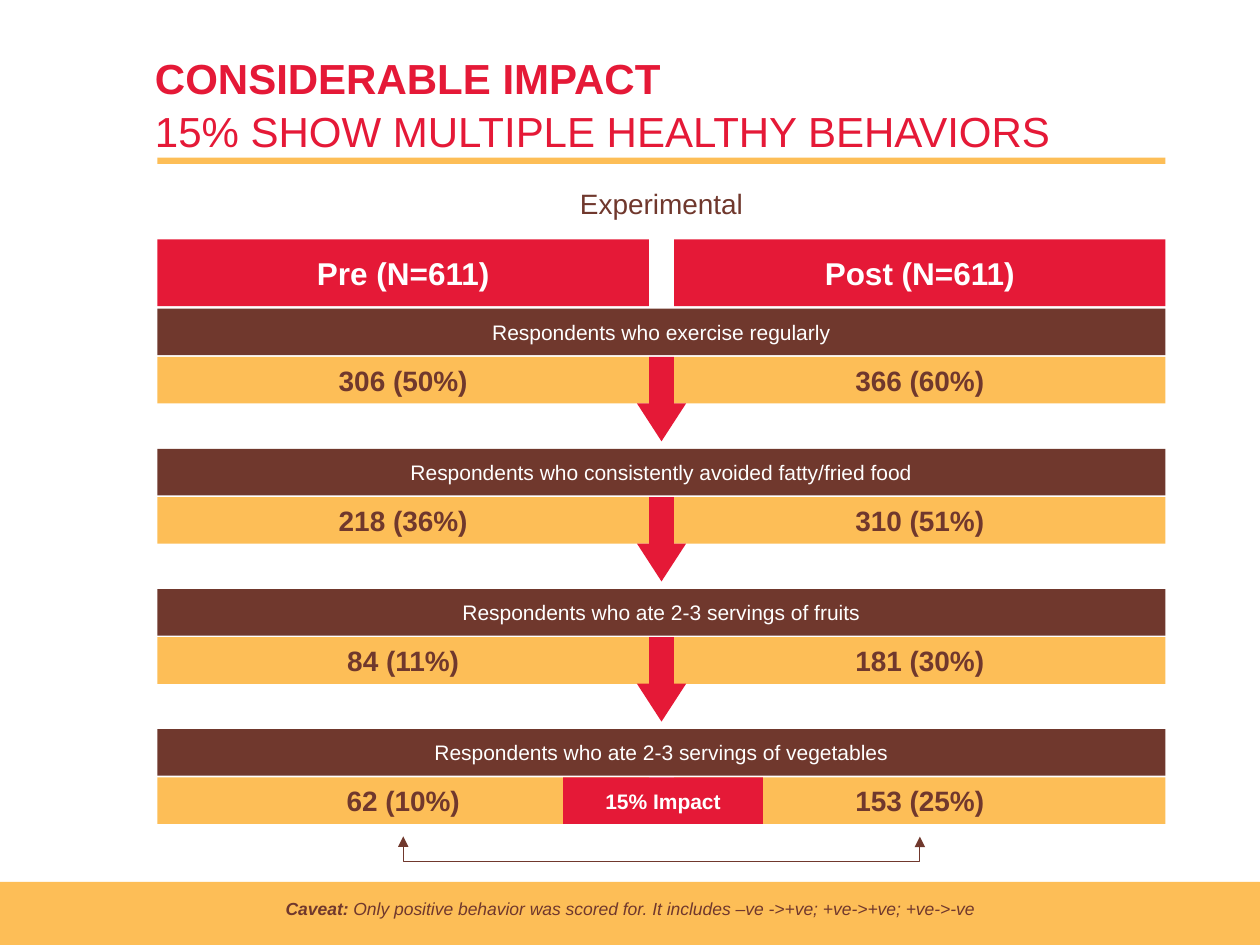
"""Build a slide comparing healthy behaviors before and after a programme."""
from dataclasses import dataclass

from lxml.etree import SubElement
from pptx import Presentation
from pptx.dml.color import RGBColor
from pptx.enum.shapes import MSO_CONNECTOR, MSO_SHAPE
from pptx.enum.text import MSO_ANCHOR, PP_ALIGN
from pptx.oxml.ns import qn
from pptx.util import Emu, Inches, Pt


@dataclass(frozen=True)
class Theme:
    font: str = "Arial"
    red: str = "E51937"
    brown: str = "70382D"
    gold: str = "FDBE57"
    white: str = "FFFFFF"
    title: int = 24
    header: int = 18
    count: int = 16
    label: int = 12
    caveat: int = 10


@dataclass(frozen=True)
class Grid:
    columns: int = 40
    rows: int = 30
    left: float = 5
    width: float = 32
    half: float = 15.6
    bar: float = 1.48
    first_stage: float = 9.8
    stage_step: float = 4.45
    count_offset: float = 1.53

    @property
    def middle(self) -> float:
        return self.left + self.width / 2

    @property
    def halves(self) -> tuple[float, float]:
        return self.left, self.left + self.width - self.half


@dataclass(frozen=True)
class Box:
    x: float
    y: float
    w: float
    h: float


@dataclass(frozen=True)
class Run:
    text: str
    size: int
    color: str
    bold: bool = False
    italic: bool = False


@dataclass(frozen=True)
class Stage:
    label: str
    counts: tuple[str, str]


THEME = Theme()
GRID = Grid()
HEADERS = ("Pre (N=611)", "Post (N=611)")
STAGES = (
    Stage("Respondents who exercise regularly", ("306 (50%)", "366 (60%)")),
    Stage("Respondents who consistently avoided fatty/fried food", ("218 (36%)", "310 (51%)")),
    Stage("Respondents who ate 2-3 servings of fruits", ("84 (11%)", "181 (30%)")),
    Stage("Respondents who ate 2-3 servings of vegetables", ("62 (10%)", "153 (25%)")),
)

prs = Presentation()
prs.slide_width, prs.slide_height = Inches(10), Inches(7.5)


def col(n: float) -> Emu:
    """Convert grid columns to a length."""
    return Emu(round(prs.slide_width * n / GRID.columns))


def row(n: float) -> Emu:
    """Convert grid rows to a length."""
    return Emu(round(prs.slide_height * n / GRID.rows))


def place(box: Box) -> tuple[Emu, Emu, Emu, Emu]:
    """Convert a grid box to left, top, width and height."""
    return col(box.x), row(box.y), col(box.w), row(box.h)


def add_run(p, run: Run) -> None:
    """Append one formatted run to a paragraph."""
    r = p.add_run()
    r.text = run.text
    f = r.font
    f.name, f.size, f.bold, f.italic = THEME.font, Pt(run.size), run.bold, run.italic
    f.color.rgb = RGBColor.from_string(run.color)


def add_block(s, box: Box, fill: str, run: Run | None = None, kind=MSO_SHAPE.RECTANGLE):
    """Draw a flat filled shape with optional centred text."""
    sp = s.shapes.add_shape(kind, *place(box))
    sp.shadow.inherit = False
    sp.fill.solid()
    sp.fill.fore_color.rgb = RGBColor.from_string(fill)
    sp.line.fill.background()
    if run:
        tf = sp.text_frame
        tf.vertical_anchor = MSO_ANCHOR.MIDDLE
        p = tf.paragraphs[0]
        p.alignment = PP_ALIGN.CENTER
        add_run(p, run)
    return sp


def add_caption(s, box: Box, *runs: Run) -> None:
    """Add a centred text box."""
    tf = s.shapes.add_textbox(*place(box)).text_frame
    tf.word_wrap = True
    p = tf.paragraphs[0]
    p.alignment = PP_ALIGN.CENTER
    for run in runs:
        add_run(p, run)


def set_title(s, box: Box, *runs: Run) -> None:
    """Place the title and fill it with one paragraph per run."""
    sp = s.shapes.title
    sp.left, sp.top, sp.width, sp.height = place(box)
    tf = sp.text_frame
    tf.vertical_anchor = MSO_ANCHOR.TOP
    tf.margin_top, tf.margin_bottom = Inches(0.09), 0
    for i, run in enumerate(runs):
        p = tf.add_paragraph() if i else tf.paragraphs[0]
        p.alignment = PP_ALIGN.LEFT
        p.space_before = Pt(i)
        add_run(p, run)


def add_stage(s, stage: Stage, y: float) -> None:
    """Draw a label bar with its two counts beneath."""
    add_block(s, Box(GRID.left, y, GRID.width, GRID.bar), THEME.brown,
              Run(stage.label, THEME.label, THEME.white))
    for x, count in zip(GRID.halves, stage.counts):
        add_block(s, Box(x, y + GRID.count_offset, GRID.half, GRID.bar), THEME.gold,
                  Run(count, THEME.count, THEME.brown, bold=True))


def add_bracket(s, y: float, span: float, drop: float) -> None:
    """Draw a double-headed elbow connector that dips below both columns."""
    width = Emu(1588)
    x = col(GRID.middle)
    c = s.shapes.add_connector(MSO_CONNECTOR.ELBOW, x + width, row(y) - col(span / 2),
                               x, row(y) + col(span / 2))
    c.line.color.rgb = RGBColor.from_string(THEME.brown)
    c.line.width = Pt(0.5)
    pr = c._element.spPr
    pr.find(qn("a:xfrm")).set("rot", str(270 * 60000))
    guides = pr.find(qn("a:prstGeom")).get_or_add_avLst()
    SubElement(guides, qn("a:gd"), name="adj1", fmla=f"val {round(row(drop) / width * 100000)}")
    for end in ("a:headEnd", "a:tailEnd"):
        SubElement(pr.find(qn("a:ln")), qn(end), type="triangle")
    SubElement(pr, qn("a:effectLst"))


def main() -> None:
    """Compose and save the slide."""
    s = prs.slides.add_slide(prs.slide_layouts[5])
    add_block(s, Box(GRID.left, 5, GRID.width, 0.2), THEME.gold)
    set_title(s, Box(4.52, 1.32, 35.48, 3),
              Run("CONSIDERABLE IMPACT", THEME.title, THEME.red, bold=True),
              Run("15% SHOW MULTIPLE HEALTHY BEHAVIORS", THEME.title, THEME.red))
    for x, header in zip(GRID.halves, HEADERS):
        add_block(s, Box(x, 7.6, GRID.half, 2.12), THEME.red,
                  Run(header, THEME.header, THEME.white, bold=True))
    tops = [GRID.first_stage + i * GRID.stage_step for i in range(len(STAGES))]
    for stage, y in zip(STAGES, tops):
        add_stage(s, stage, y)
    add_block(s, Box(0, 28, GRID.columns, 2), THEME.gold)
    add_caption(s, Box(0, 28.32, GRID.columns, 1.08),
                Run("Caveat: ", THEME.caveat, THEME.brown, bold=True, italic=True),
                Run("Only positive behavior was scored for. It includes –ve ->+ve; +ve->+ve; +ve->-ve",
                    THEME.caveat, THEME.brown, italic=True))
    for y in tops[:-1]:
        arrow = add_block(s, Box(GRID.middle - 0.78, y + GRID.count_offset, 1.56, 2.68),
                          THEME.red, kind=MSO_SHAPE.DOWN_ARROW)
        arrow.adjustments[0], arrow.adjustments[1] = 0.5, 0.77
    add_block(s, Box(17.88, tops[-1] + GRID.count_offset, 6.34, GRID.bar), THEME.red,
              Run("15% Impact", THEME.label, THEME.white, bold=True))
    add_bracket(s, 26.56, GRID.halves[1] - GRID.halves[0], 0.88)
    add_caption(s, Box(GRID.left, 5.72, GRID.width, GRID.bar),
                Run("Experimental", THEME.count, THEME.brown))
    prs.save("out.pptx")


if __name__ == "__main__":
    main()
